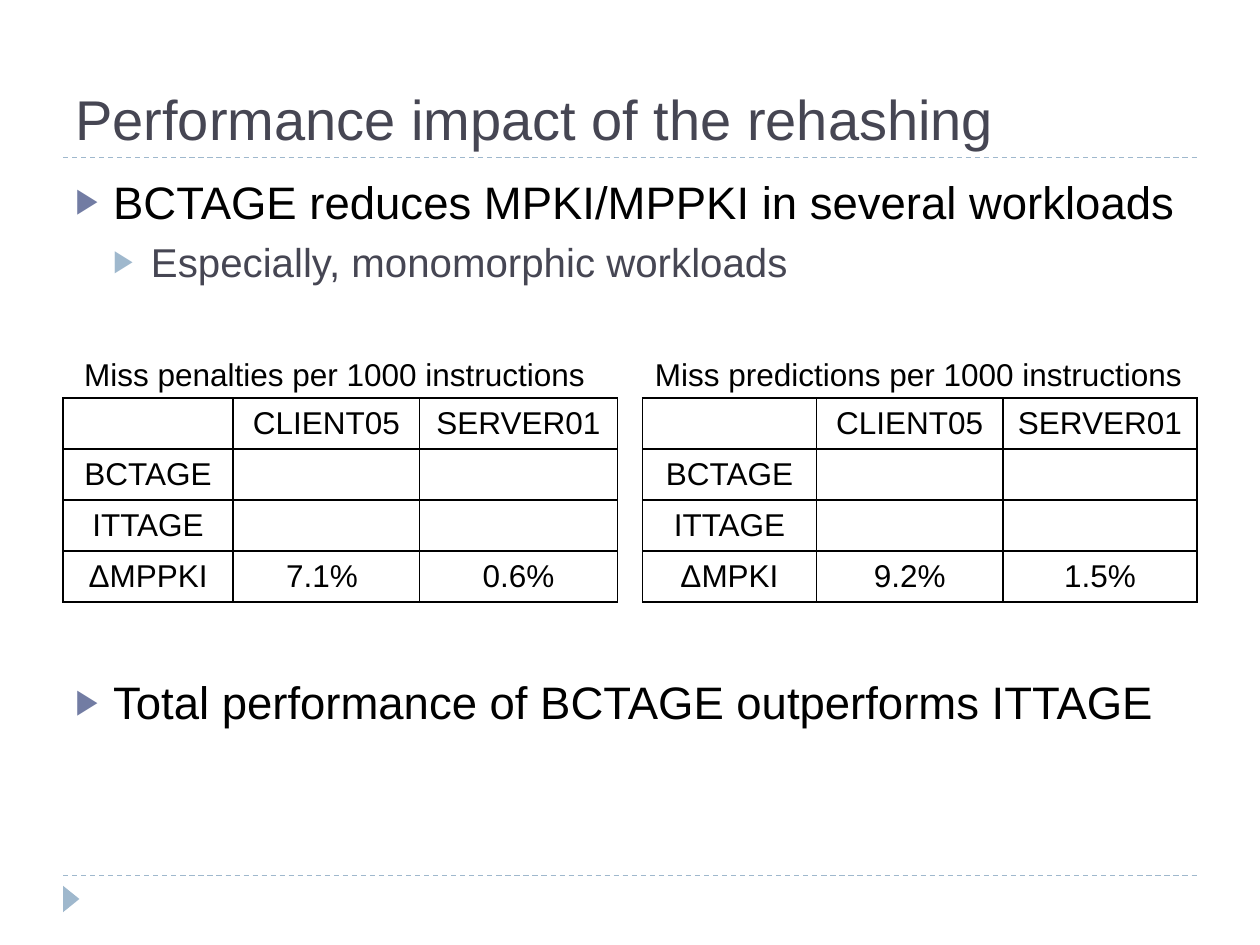
"""Build the slide on the performance impact of rehashing."""
from dataclasses import dataclass

from lxml.etree import SubElement
from pptx import Presentation
from pptx.dml.color import RGBColor
from pptx.enum.dml import MSO_LINE
from pptx.enum.shapes import MSO_CONNECTOR, MSO_SHAPE
from pptx.enum.text import MSO_ANCHOR, PP_ALIGN
from pptx.oxml import parse_xml
from pptx.oxml.ns import nsdecls, qn
from pptx.util import Inches, Pt


@dataclass(frozen=True)
class Theme:
    """Colours, font and type sizes."""
    font: str = "Arial"
    black: str = "000000"
    slate: str = "464653"
    blue: str = "727CA3"
    pale: str = "9FB8CD"
    title: int = 32
    point: int = 26
    minor: int = 23
    small: int = 18


class Deck:
    """Draws elements on the current slide in one style."""

    def __init__(self, theme):
        self.theme = theme
        self.deck = Presentation()
        self.deck.slide_width = Inches(10)
        self.deck.slide_height = Inches(7.5)
        self.slide = self.deck.slides.add_slide(self.deck.slide_layouts[6])

    def add_text(self, para, text, size, color):
        run = para.add_run()
        run.text = text
        run.font.name = self.theme.font
        run.font.size = Pt(size)
        run.font.color.rgb = RGBColor.from_string(color)

    def frame(self, left, top, width, height):
        box = self.slide.shapes.add_textbox(
            Inches(left), Inches(top), Inches(width), Inches(height))
        box.text_frame.word_wrap = True
        return box.text_frame

    def label(self, text, box, size, color, anchor=MSO_ANCHOR.TOP):
        frame = self.frame(*box)
        frame.vertical_anchor = anchor
        self.add_text(frame.paragraphs[0], text, size, color)

    def points(self, items, box):
        frame = self.frame(*box)
        looks = [(self.theme.point, self.theme.black, self.theme.blue, 6),
                 (self.theme.minor, self.theme.slate, self.theme.pale, 5)]
        for index, (text, level) in enumerate(items):
            para = frame.add_paragraph() if index else frame.paragraphs[0]
            size, color, mark, space = looks[level]
            para.level = level
            para.space_before = Pt(space)
            self.bullet(para, level, mark)
            self.add_text(para, text, size, color)

    def bullet(self, para, level, color):
        props = para._p.get_or_add_pPr()
        props.set("marL", str(Inches(0.3 * (level + 1))))
        props.set("indent", str(Inches(-0.3)))
        tint = SubElement(props, qn("a:buClr"))
        SubElement(tint, qn("a:srgbClr"), val=color)
        SubElement(props, qn("a:buSzPct"), val="76000")
        SubElement(props, qn("a:buFont"), typeface=self.theme.font)
        SubElement(props, qn("a:buChar"), char="▶")

    def rule(self, top):
        line = self.slide.shapes.add_connector(
            MSO_CONNECTOR.STRAIGHT,
            Inches(0.5), Inches(top), Inches(9.5), Inches(top))
        line.line.color.rgb = RGBColor.from_string(self.theme.pale)
        line.line.width = Pt(0.75)
        line.line.dash_style = MSO_LINE.DASH
        SubElement(line._element.spPr, qn("a:effectLst"))

    def marker(self, left, top, width, height):
        shape = self.slide.shapes.add_shape(
            MSO_SHAPE.ISOSCELES_TRIANGLE,
            Inches(left), Inches(top), Inches(width), Inches(height))
        shape.rotation = 90
        shape.shadow.inherit = False
        shape.fill.solid()
        shape.fill.fore_color.rgb = RGBColor.from_string(self.theme.pale)
        shape.line.fill.background()

    def table(self, left, top, widths, rows):
        step = 0.405
        grid = self.slide.shapes.add_table(
            len(rows), len(widths), Inches(left), Inches(top),
            Inches(sum(widths)), Inches(step * len(rows))).table
        grid.first_row = grid.horz_banding = False
        for column, width in zip(grid.columns, widths):
            column.width = Inches(width)
        for line, values in zip(grid.rows, rows):
            line.height = Inches(step)
            for cell, text in zip(line.cells, values):
                self.cell(cell, text)

    def cell(self, cell, text):
        cell.fill.background()
        cell.vertical_anchor = MSO_ANCHOR.MIDDLE
        para = cell.text_frame.paragraphs[0]
        para.alignment = PP_ALIGN.CENTER
        para.font.size = Pt(self.theme.small)
        if text:
            self.add_text(para, text, self.theme.small, self.theme.black)
        props = cell._tc.get_or_add_tcPr()
        for index, side in enumerate("LRTB"):
            props.insert(index, parse_xml(
                f'<a:ln{side} {nsdecls("a")} w="{Pt(1)}"><a:solidFill>'
                f'<a:srgbClr val="{self.theme.black}"/>'
                f'</a:solidFill></a:ln{side}>'))


def rows(delta, client, server):
    """Return the rows of one result table."""
    return [("", "CLIENT05", "SERVER01"), ("BCTAGE", "", ""),
            ("ITTAGE", "", ""), (delta, client, server)]


def main():
    """Compose the slide and save it."""
    theme = Theme()
    deck = Deck(theme)
    for top in (6.95, 1.25):
        deck.rule(top)
    deck.marker(0.46, 7.07, 0.21, 0.13)
    deck.label("Performance impact of the rehashing", (0.5, 0.17, 9, 1.08),
               theme.title, theme.slate, MSO_ANCHOR.BOTTOM)
    deck.points([("BCTAGE reduces MPKI/MPPKI in several workloads", 0),
                 ("Especially, monomorphic workloads", 1)],
                (0.5, 1.33, 9, 1.24))
    deck.table(0.5, 3.16, (1.35, 1.48, 1.57), rows("ΔMPPKI", "7.1% ", "0.6%"))
    deck.table(5.1, 3.16, (1.38, 1.48, 1.54), rows("ΔMPKI", "9.2%", "1.5%"))
    for text, left, width in (
            ("Miss penalties per 1000 instructions", 0.57, 4.33),
            ("Miss predictions per 1000 instructions", 5.1, 4.43)):
        deck.label(text, (left, 2.77, width, 0.4), theme.small, theme.black)
    deck.points([("Total performance of BCTAGE outperforms ITTAGE", 0)],
                (0.5, 5.3, 9, 1.24))
    deck.deck.save("out.pptx")


if __name__ == "__main__":
    main()
